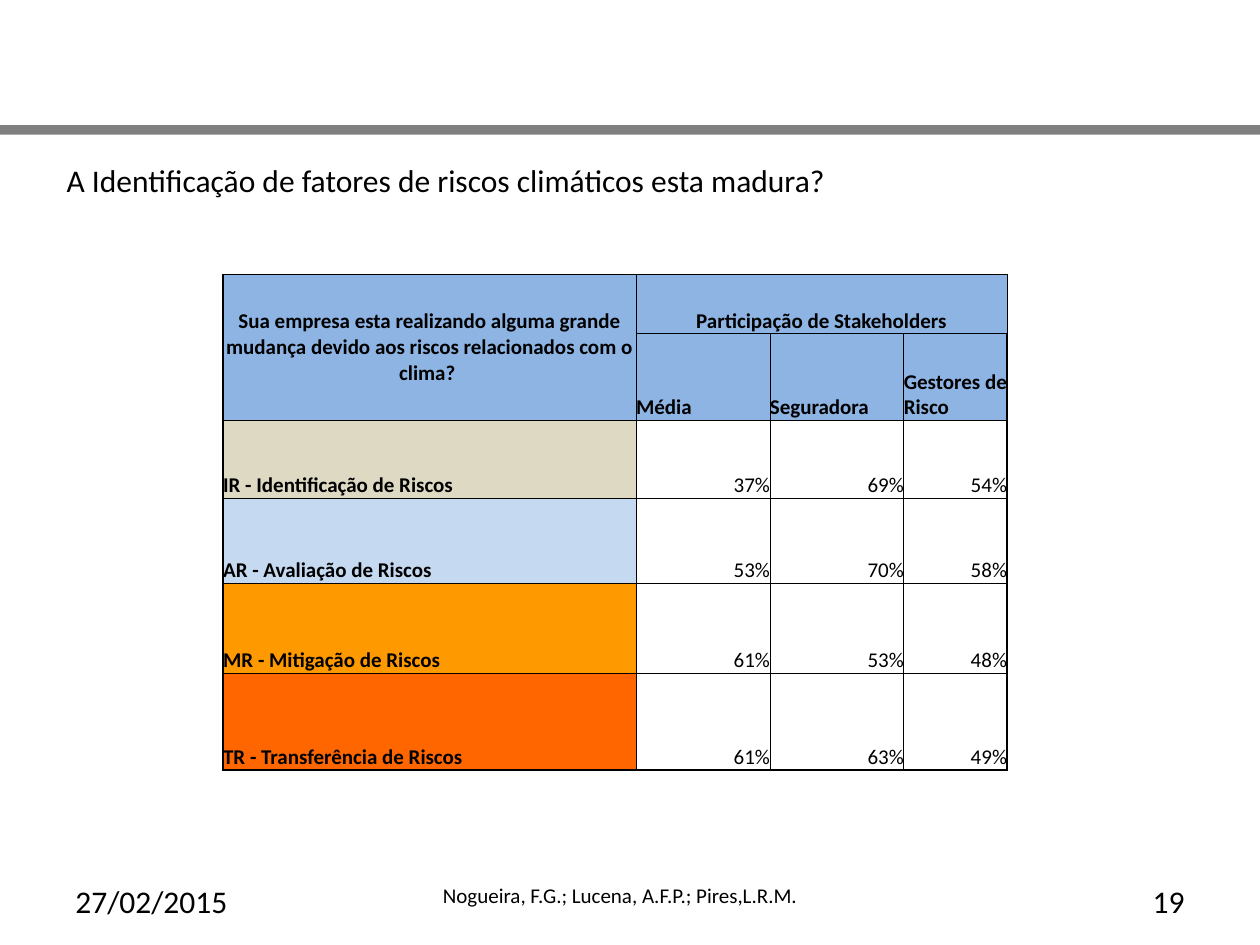
import pptx
import pptx.dml.color
import pptx.enum.shapes
import pptx.enum.text
import pptx.oxml
import pptx.oxml.ns
import pptx.util

Pt = pptx.util.Pt
Align = pptx.enum.text.PP_ALIGN
Anchor = pptx.enum.text.MSO_ANCHOR

QUESTION = "Sua empresa esta realizando alguma grande mudança devido aos riscos relacionados com o clima? "
HEADER_FILL = "8DB4E3"
STAKEHOLDERS = ["Média", "Seguradora", "Gestores de Risco"]
RISK_STAGES = [
    ("IR - Identificação de Riscos", "DDD9C3", [37, 69, 54]),
    ("AR - Avaliação de Riscos", "C5D9F1", [53, 70, 58]),
    ("MR - Mitigação de Riscos", "FF9900", [61, 53, 48]),
    ("TR - Transferência de Riscos", "FF6600", [61, 63, 49]),
]
COLUMN_WIDTHS = [236, 76.5, 76.5, 59]
ROW_HEIGHTS = [34, 49.5, 44.5, 48.5, 51.5, 55.5]


def color(hex_code):
    return pptx.dml.color.RGBColor.from_string(hex_code)


class SlideBuilder:
    font_name = "Calibri"
    ink = "000000"
    inner_line, outer_line = 0.5, 1

    def __init__(self, slide):
        self.slide = slide

    def fill_text(self, frame, text, size, align=Align.LEFT, bold=False):
        paragraph = frame.paragraphs[0]
        paragraph.text = text
        paragraph.alignment = align
        font = paragraph.font
        font.name, font.size, font.bold = self.font_name, Pt(size), bold
        font.color.rgb = color(self.ink)

    def bar(self, left, top, width, height, fill):
        bar = self.slide.shapes.add_shape(
            pptx.enum.shapes.MSO_SHAPE.RECTANGLE, Pt(left), Pt(top), Pt(width), Pt(height))
        bar.shadow.inherit = False
        bar.fill.solid()
        bar.fill.fore_color.rgb = color(fill)
        bar.line.fill.background()

    def text(self, text, left, top, width, height, size, align=Align.LEFT):
        frame = self.slide.shapes.add_textbox(Pt(left), Pt(top), Pt(width), Pt(height)).text_frame
        frame.word_wrap = True
        self.fill_text(frame, text, size, align)

    def table(self, left, top, widths, heights):
        table = self.slide.shapes.add_table(
            len(heights), len(widths), Pt(left), Pt(top), Pt(sum(widths)), Pt(sum(heights))).table
        table.first_row = table.horz_banding = False
        for column, width in zip(table.columns, widths):
            column.width = Pt(width)
        for row, height in zip(table.rows, heights):
            row.height = Pt(height)
        last_row, last_column = len(heights) - 1, len(widths) - 1
        for r in range(len(heights)):
            for c in range(len(widths)):
                cell = table.cell(r, c)
                cell.fill.background()
                self.borders(cell, {"L": c == 0, "R": c == last_column,
                                    "T": r == 0, "B": r == last_row})
        return table

    def borders(self, cell, outer_sides):
        """Draw the four sides, heavier where they lie on the table's outline."""
        properties = cell._tc.get_or_add_tcPr()
        for index, (side, is_outer) in enumerate(outer_sides.items()):
            width = Pt(self.outer_line if is_outer else self.inner_line)
            properties.insert(index, pptx.oxml.parse_xml(
                f'<a:ln{side} {pptx.oxml.ns.nsdecls("a")} w="{width}">'
                f'<a:solidFill><a:srgbClr val="{self.ink}"/></a:solidFill></a:ln{side}>'))

    def cell(self, cell, text, align=Align.LEFT, bold=True, fill=None, anchor=Anchor.BOTTOM):
        cell.margin_left = cell.margin_right = cell.margin_top = cell.margin_bottom = 0
        cell.vertical_anchor = anchor
        if fill:
            cell.fill.solid()
            cell.fill.fore_color.rgb = color(fill)
        self.fill_text(cell.text_frame, text, 12, align, bold)


def main():
    deck = pptx.Presentation()
    deck.slide_width, deck.slide_height = Pt(720), Pt(540)
    builder = SlideBuilder(deck.slides.add_slide(deck.slide_layouts[6]))

    builder.bar(0, 71.5, 720, 5.5, "808080")
    builder.text("27/02/2015", 36, 500.5, 168, 29, 18)
    builder.text("19", 516, 500.5, 168, 29, 18, Align.RIGHT)
    builder.text("Nogueira, F.G.; Lucena, A.F.P.; Pires,L.R.M.", 246, 500.5, 228, 29, 12)
    builder.text("A Identificação de fatores de riscos climáticos esta madura?",
                 31, 88.5, 657, 40, 18)

    maturity = builder.table(127.5, 156.75, COLUMN_WIDTHS, ROW_HEIGHTS)
    maturity.cell(0, 0).merge(maturity.cell(1, 0))
    maturity.cell(0, 1).merge(maturity.cell(0, 3))
    builder.cell(maturity.cell(0, 0), QUESTION, Align.CENTER,
                 fill=HEADER_FILL, anchor=Anchor.MIDDLE)
    builder.cell(maturity.cell(0, 1), "Participação de Stakeholders", Align.CENTER,
                 fill=HEADER_FILL)
    for c, stakeholder in enumerate(STAKEHOLDERS, start=1):
        builder.cell(maturity.cell(1, c), stakeholder, fill=HEADER_FILL)
    for r, (stage, stage_fill, shares) in enumerate(RISK_STAGES, start=2):
        builder.cell(maturity.cell(r, 0), stage, fill=stage_fill)
        for c, share in enumerate(shares, start=1):
            builder.cell(maturity.cell(r, c), f"{share}%", Align.RIGHT, bold=False)

    deck.save("out.pptx")


if __name__ == "__main__":
    main()
